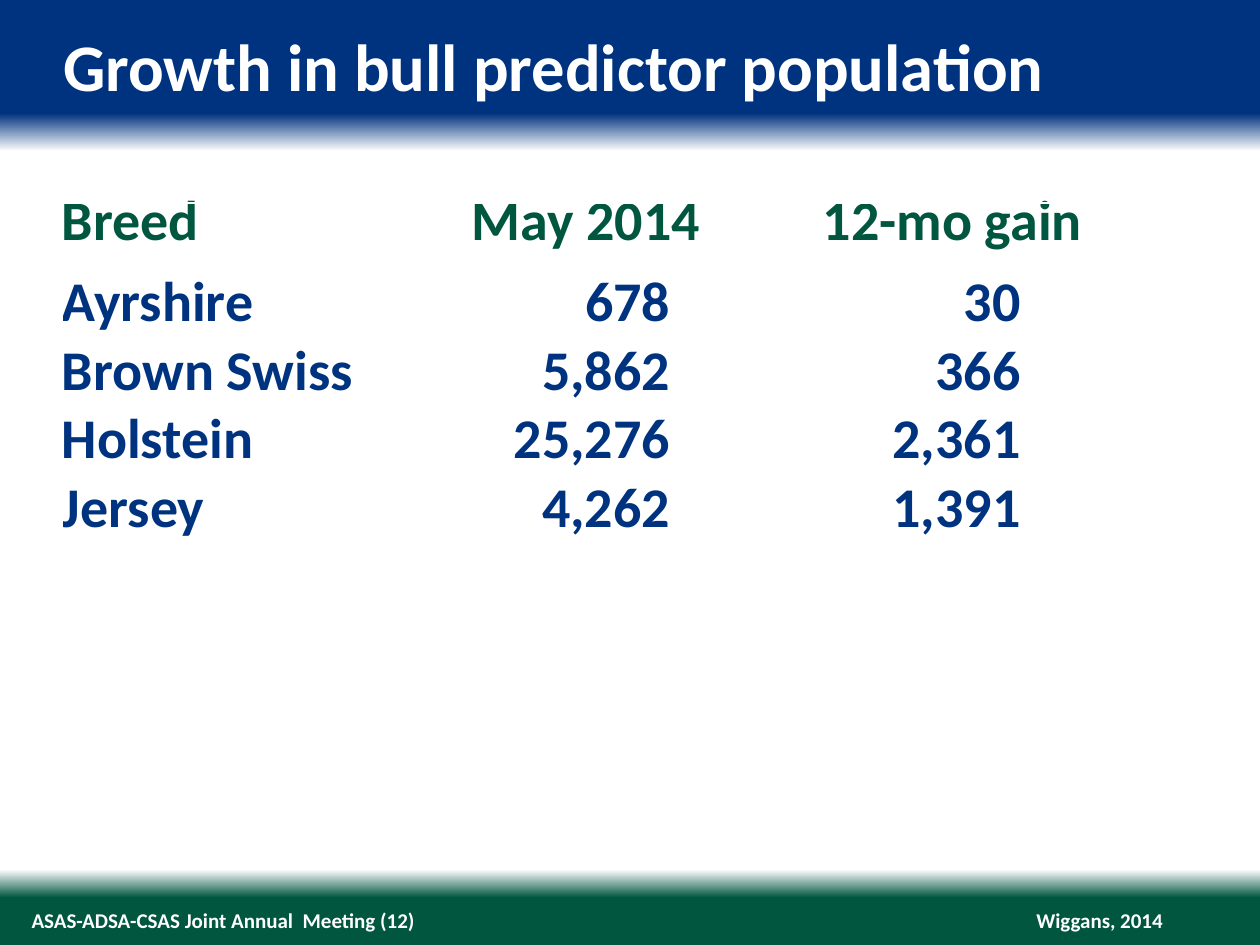
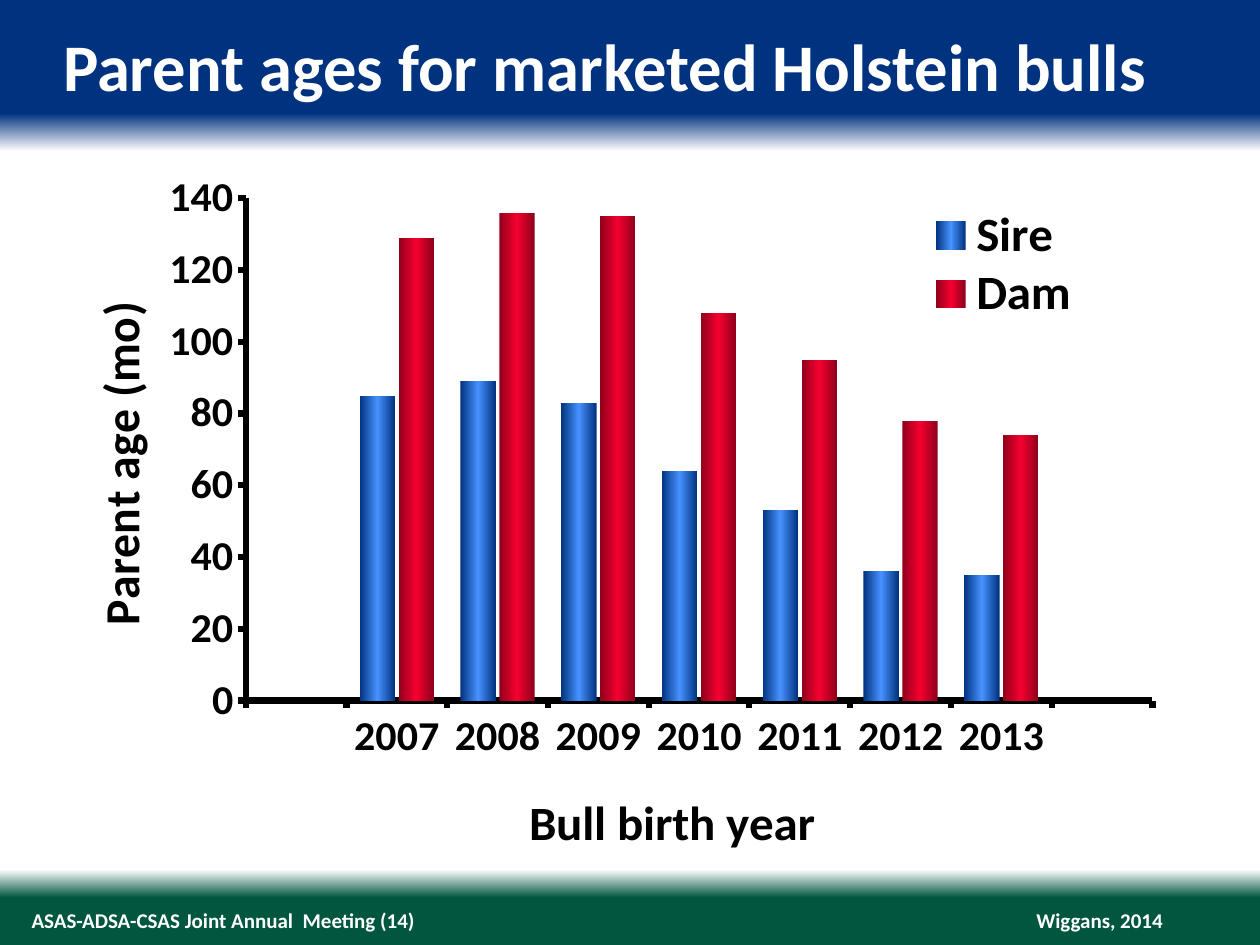
from lxml import etree
from pptx import Presentation
from pptx.chart.data import CategoryChartData
from pptx.dml.color import RGBColor
from pptx.enum.chart import XL_CHART_TYPE, XL_LEGEND_POSITION, XL_TICK_MARK
from pptx.enum.text import MSO_ANCHOR, MSO_AUTO_SIZE, PP_ALIGN
from pptx.oxml.ns import qn
from pptx.util import Inches, Pt

COLUMNS = XL_CHART_TYPE.COLUMN_CLUSTERED
LEGEND_RIGHT = XL_LEGEND_POSITION.RIGHT
TICK_OUTSIDE = XL_TICK_MARK.OUTSIDE
TICK_NONE = XL_TICK_MARK.NONE
TOP, MIDDLE, BOTTOM = MSO_ANCHOR.TOP, MSO_ANCHOR.MIDDLE, MSO_ANCHOR.BOTTOM
LEFT, CENTER, RIGHT = PP_ALIGN.LEFT, PP_ALIGN.CENTER, PP_ALIGN.RIGHT

NAVY = RGBColor(0x00, 0x33, 0x7F)
GREEN = RGBColor(0x00, 0x56, 0x3F)
WHITE = RGBColor(0xFF, 0xFF, 0xFF)
BLACK = RGBColor(0x00, 0x00, 0x00)
SKY = RGBColor(0x47, 0x91, 0xFF)
MAROON = RGBColor(0x8E, 0x00, 0x1B)
RED = RGBColor(0xF6, 0x00, 0x2F)

FRAME = {"margin_left": 0, "margin_right": 0, "margin_top": 0,
         "margin_bottom": 0, "auto_size": MSO_AUTO_SIZE.NONE}


def style(font, size, color):
    formats = {"name": "Calibri", "size": Pt(size), "bold": True}
    for name, value in formats.items():
        setattr(font, name, value)
    font.color.rgb = color


def paint_gradient(fill, element, stops, angle):
    fill.gradient()
    gradient = next(element.iter(qn("a:gradFill")))
    stop_list = gradient.find(qn("a:gsLst"))
    for stop in list(stop_list):
        stop_list.remove(stop)
    for percent, color in stops:
        stop = etree.SubElement(stop_list, qn("a:gs"), pos=str(percent * 1000))
        etree.SubElement(stop, qn("a:srgbClr"), val=str(color))
    gradient.find(qn("a:lin")).set("ang", str(angle * 60000))


deck = Presentation()
deck.slide_width, deck.slide_height = Inches(10), Inches(7.5)
master = deck.slide_master
paint_gradient(master.background.fill, master.element,
               [(0, NAVY), (12, NAVY), (16, WHITE), (92, WHITE), (95, GREEN), (100, GREEN)], 90)

pages = []
for heading, number in [("Growth in bull predictor population", 12),
                        ("Parent ages for marketed Holstein bulls", 14)]:
    page = deck.slides.add_slide(deck.slide_layouts[5])
    pages.append(page)
    title = page.shapes.title
    title.left, title.top, title.width, title.height = map(Inches, (0.5, 0.2, 9, 0.65))
    footers = [(page.shapes.add_textbox(Inches(left), Inches(7.2), Inches(width), Inches(0.2)),
                text, 12, align, MIDDLE)
               for left, width, text, align in [
                   (8.21, 1.02, "Wiggans, 2014", RIGHT),
                   (0.25, 5.22, f"ASAS-ADSA-CSAS Joint Annual  Meeting ({number})", LEFT)]]
    for box, text, size, align, anchor in [(title, heading, 38, LEFT, TOP)] + footers:
        frame = box.text_frame
        for name, value in FRAME.items():
            setattr(frame, name, value)
        frame.word_wrap = box is title
        frame.vertical_anchor = anchor
        para = frame.paragraphs[0]
        para.text, para.alignment = text, align
        style(para.font, size, WHITE)

growth_page, ages_page = pages

breeds = [
    ("Breed", "May 2014", "12-mo gain"),
    ("Ayrshire", "678", "30"),
    ("Brown Swiss", "5,862", "366"),
    ("Holstein", "25,276", "2,361"),
    ("Jersey", "4,262", "1,391"),
]
row_heights = [0.42, 0.64, 0.54, 0.54, 0.54]
table = growth_page.shapes.add_table(len(breeds), 3, Inches(0.49), Inches(1.61),
                                     Inches(8.11), Inches(sum(row_heights))).table
table.first_row = table.horz_banding = False
for column, width in zip(table.columns, (2.44, 3.59, 2.08)):
    column.width = Inches(width)
for row, height in zip(table.rows, row_heights):
    row.height = Inches(height)
for row_index, values in enumerate(breeds):
    is_header = row_index == 0
    right_margins = (0, 0.15, 0) if is_header else (0, 1.2, 0.5)
    for column_index, value in enumerate(values):
        cell = table.cell(row_index, column_index)
        formats = {"margin_left": 0, "margin_bottom": 0, "vertical_anchor": BOTTOM,
                   "margin_top": Inches(0.1 if row_index == 1 and column_index == 0 else 0),
                   "margin_right": Inches(right_margins[column_index])}
        for name, setting in formats.items():
            setattr(cell, name, setting)
        cell.fill.background()
        para = cell.text_frame.paragraphs[0]
        para.text = value
        para.alignment = LEFT if column_index == 0 else CENTER if is_header else RIGHT
        if is_header:
            para.line_spacing = Pt(30)
        style(para.font, 32, GREEN if is_header else NAVY)

ages = CategoryChartData()
ages.categories = ["", *map(str, range(2007, 2014)), ""]
ages.add_series("Sire", [None, 85, 89, 83, 64, 53, 36, 35, None])
ages.add_series("Dam", [None, 129, 136, 135, 108, 95, 78, 74, None])
chart = ages_page.shapes.add_chart(COLUMNS, Inches(0.34), Inches(0.87),
                                   Inches(9.47), Inches(6.02), ages).chart
style(chart.font, 18, BLACK)
chart.has_title = False
plot = chart.plots[0]
plot.gap_width, plot.overlap, plot.vary_by_categories = 75, -10, False
for series, (edge, middle) in zip(plot.series, [(NAVY, SKY), (MAROON, RED)]):
    paint_gradient(series.format.fill, series._element,
                   [(0, edge), (50, middle), (100, edge)], 0)

year_axis, age_axis = chart.category_axis, chart.value_axis
for axis, name in [(year_axis, "Bull birth year"), (age_axis, "Parent age (mo)")]:
    axis.has_major_gridlines = False
    axis.major_tick_mark, axis.minor_tick_mark = TICK_OUTSIDE, TICK_NONE
    axis.format.line.color.rgb = BLACK
    axis.format.line.width = Pt(3.5)
    style(axis.tick_labels.font, 24, BLACK)
    frame = axis.axis_title.text_frame
    frame.text = name
    style(frame.paragraphs[0].runs[0].font, 28, BLACK)
age_axis.minimum_scale, age_axis.maximum_scale, age_axis.major_unit = 0, 140, 20
rotation = age_axis.axis_title.text_frame._txBody.bodyPr
rotation.set("rot", "-5400000")
rotation.set("vert", "horz")

chart.has_legend = True
legend = chart.legend
legend.position, legend.include_in_layout = LEGEND_RIGHT, False
style(legend.font, 28, BLACK)

plot_area = chart._chartSpace.chart.plotArea
for element, position, places in [
        (plot_area, 0, {"x": 0.17, "y": 0.12, "w": 0.76, "h": 0.68}),
        (year_axis.axis_title._element, 1, {"x": 0.4, "y": 0.91}),
        (age_axis.axis_title._element, 1, {"x": 0.03, "y": 0.26}),
        (legend._element, 1, {"x": 0.73, "y": 0.13, "w": 0.15, "h": 0.16})]:
    for old_layout in element.findall(qn("c:layout")):
        element.remove(old_layout)
    layout = etree.Element(qn("c:layout"))
    manual = etree.SubElement(layout, qn("c:manualLayout"))
    if element is plot_area:
        etree.SubElement(manual, qn("c:layoutTarget"), val="inner")
    for axis_name in "xy":
        etree.SubElement(manual, qn(f"c:{axis_name}Mode"), val="edge")
    for key, value in places.items():
        etree.SubElement(manual, qn(f"c:{key}"), val=str(value))
    element.insert(position, layout)

deck.save("out.pptx")
